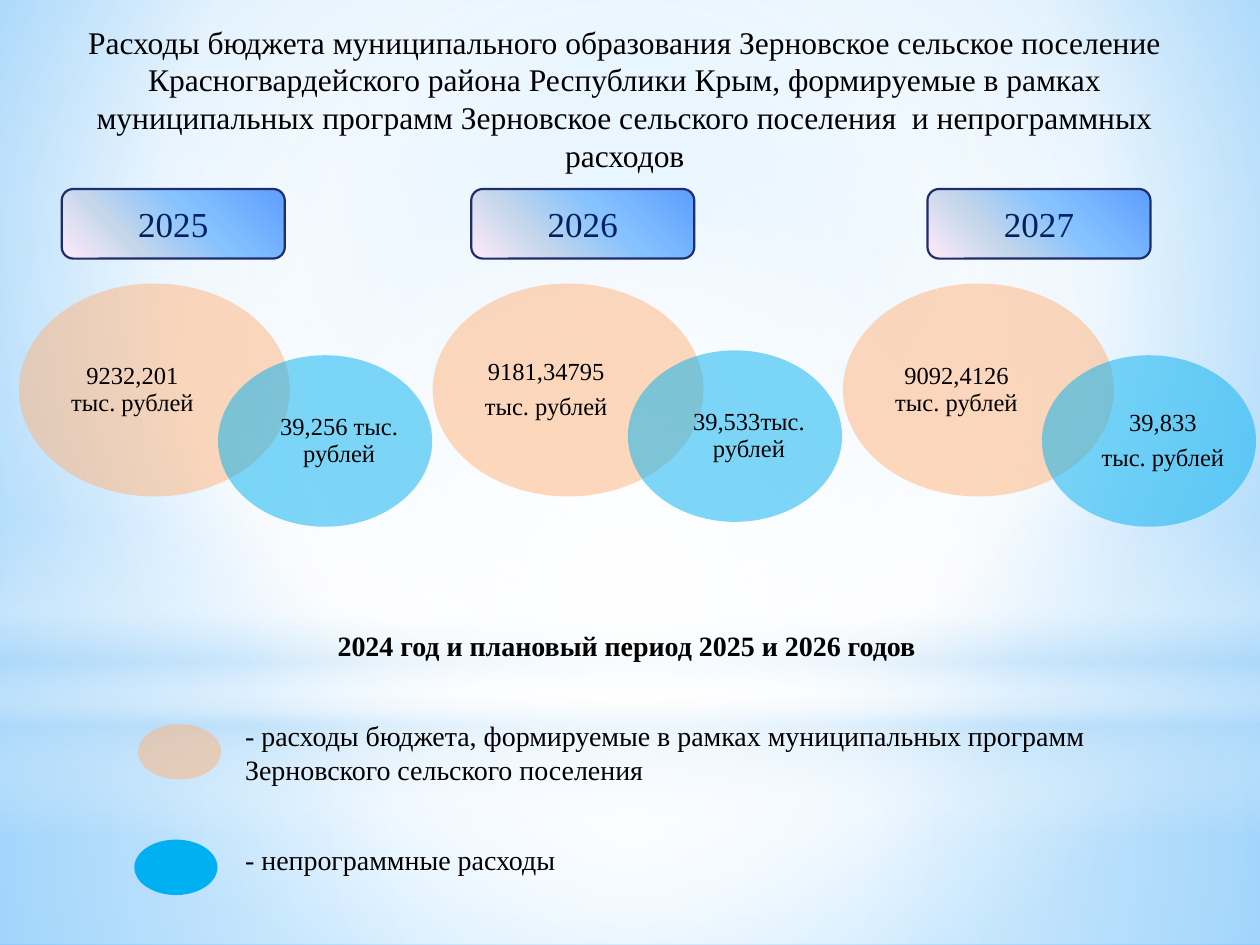
"""Build the slide on programme and non-programme budget spending."""
import pptx
import pptx.dml.color
import pptx.enum.shapes
import pptx.enum.text
import pptx.oxml
import pptx.oxml.ns
import pptx.util

Pt = pptx.util.Pt
RGB = pptx.dml.color.RGBColor.from_string
Kind = pptx.enum.shapes.MSO_SHAPE
Align = pptx.enum.text.PP_ALIGN
Anchor = pptx.enum.text.MSO_ANCHOR
qn = pptx.oxml.ns.qn
NS = pptx.oxml.ns.nsdecls("a")

theme = {
    "font": "Times New Roman", "ink": "000000", "navy": "002060", "edge": "1F2E69",
    "peach": "FFB37A", "blue": "00B0F0",
    "title": 18, "year": 20, "value": 14, "note": 16,
    "sky": [(0, "9ED5FF", 100), (60, "FFFFFF", 100), (100, "5BB9FF", 100)],
    "floor": [(0, "FFFFFF", 91), (37, "FFFFFF", 76), (100, "B4DCFA", 79)],
    "wall": [(0, "FFFFFF", 89), (48, "FFFFFF", 62), (100, "B4DCFA", 79)],
    "band": [(0, "FFFFFF", 0), (29, "FFFFFF", 30), (45, "B4DCFA", 40),
             (55, "FFFFFF", 26), (65, "B4DCFA", 60), (100, "FFFFFF", 0)],
    "glow": [(0, "FFFFFF", 100), (56, "FFFFFF", 0)],
    "tab": [(0, "5E9EFF", 100), (40, "85C2FF", 100), (70, "C4D6EB", 100), (100, "FFEBFA", 100)],
}


def blend(item, stops, way):
    """Fill with a gradient; way is an angle or the four sides of a focus."""
    item.fill.gradient()
    marks = "".join(
        f'<a:gs pos="{pos * 1000}"><a:srgbClr val="{tone}"><a:alpha val="{alpha * 1000}"/></a:srgbClr></a:gs>'
        for pos, tone, alpha in stops)
    if isinstance(way, tuple):
        sides = " ".join(f'{side}="{part * 1000}"' for side, part in zip("ltrb", way))
        tail = f'<a:path path="circle"><a:fillToRect {sides}/></a:path>'
    else:
        tail = f'<a:lin ang="{way * 60000}" scaled="0"/>'
    old = item._element.find(".//" + qn("a:gradFill"))
    new = pptx.oxml.parse_xml(f'<a:gradFill {NS} rotWithShape="1"><a:gsLst>{marks}</a:gsLst>{tail}</a:gradFill>')
    old.getparent().replace(old, new)


def draw(kind, box, lines=(), size=14, tone="ink", align=Align.CENTER, pad=(7.2, 3.6, 7.2, 3.6)):
    """Add a preset shape, or a text box when kind is None."""
    spot = [Pt(n) for n in box]
    if kind is None:
        item = slide.shapes.add_textbox(*spot)
    else:
        item = slide.shapes.add_shape(kind, *spot)
        item.shadow.inherit = False
        item.line.fill.background()
    frame = item.text_frame
    frame.word_wrap = True
    frame.vertical_anchor = Anchor.TOP if kind is None else Anchor.MIDDLE
    frame.margin_left, frame.margin_top, frame.margin_right, frame.margin_bottom = [Pt(n) for n in pad]
    for i, line in enumerate(lines):
        para = frame.add_paragraph() if i else frame.paragraphs[0]
        para.text = line
        para.alignment = align
        para.font.name = theme["font"]
        para.font.size = Pt(theme.get(size, size))
        para.font.color.rgb = RGB(theme[tone])
    return item


deck = pptx.Presentation()
deck.slide_width, deck.slide_height = Pt(720), Pt(540)
slide = deck.slides.add_slide(deck.slide_layouts[6])

blend(slide.background, theme["sky"], (20, 10, 20, 60))
mid = (50, 50, 50, 50)
for kind, top, high, name, way in [
    (Kind.RECTANGLE, 402, 138, "floor", mid),
    (Kind.RECTANGLE, 0, 402, "wall", mid),
    (Kind.RECTANGLE, 297, 180, "band", 90),
    (Kind.OVAL, 126, 402, "glow", mid),
]:
    blend(draw(kind, (0, top, 720, high)), theme[name], way)

draw(None, (31, 9.4, 652, 94), [
    "Расходы бюджета муниципального образования Зерновское сельское поселение "
    "Красногвардейского района Республики Крым, формируемые в рамках "
    "муниципальных программ Зерновское сельского поселения  и непрограммных расходов"], "title")

for year, left in [("2025", 35.3), ("2026", 269.3), ("2027", 530)]:
    tab = draw(Kind.ROUNDED_RECTANGLE, (left, 108, 127.5, 39.8), [year], "year", "navy")
    blend(tab, theme["tab"], 135)
    tab.line.color.rgb = RGB(theme["edge"])
    tab.line.width = Pt(1.25)

large, small, key = (154.8, 121.7), (122.4, 98), (47.5, 31.7)
inner, outer = (3, 4, 28, 4), (16, 0, 0, 0)
for left, top, size, tone, alpha, pad, lines in [
    (10.8, 162, large, "peach", 50, inner, ["9232,201 тыс. рублей"]),
    (124.6, 203, small, "blue", 50, outer, ["39,256 тыс. рублей"]),
    (247.2, 162, large, "peach", 50, inner, ["9181,34795", "тыс. рублей"]),
    (358.8, 200.2, small, "blue", 50, outer, ["39,533тыс. рублей"]),
    (481.7, 162, large, "peach", 50, inner, ["9092,4126 тыс. рублей"]),
    (595.4, 203, small, "blue", 50, outer, ["39,833", "тыс. рублей"]),
    (78.9, 413.8, key, "peach", 50, inner, []),
    (76.8, 479.8, key, "blue", 100, inner, []),
]:
    oval = draw(Kind.OVAL, (left, top, *size), lines, "value", pad=pad)
    oval.fill.solid()
    oval.fill.fore_color.rgb = RGB(theme[tone])
    shade = oval._element.spPr.find(qn("a:solidFill"))[0]
    shade.append(pptx.oxml.parse_xml(f'<a:alpha {NS} val="{alpha * 1000}"/>'))
    for para in oval.text_frame.paragraphs:
        para.line_spacing = 0.9
        para.space_after = Pt(5)

for box, text, bold in [
    ((133, 407, 556, 46), "- расходы бюджета, формируемые в рамках муниципальных программ "
                          "Зерновского сельского поселения", False),
    ((133, 478.2, 487.5, 26.6), "- непрограммные расходы", False),
    ((185.8, 355.9, 383, 26.6), "2024 год и плановый период 2025 и 2026 годов", True),
]:
    note = draw(None, box, [text], "note", align=Align.LEFT)
    note.text_frame.paragraphs[0].font.bold = bold

deck.save("out.pptx")
